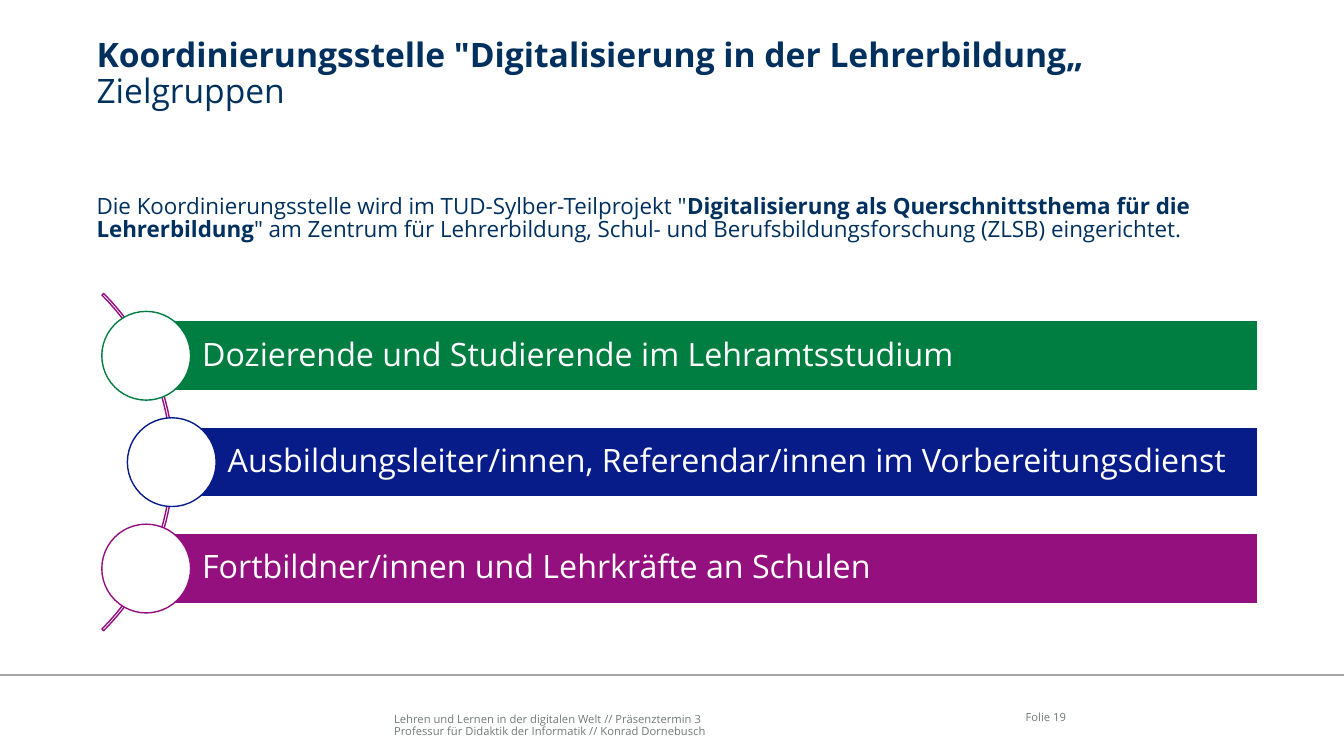
import pptx
import pptx.util
import pptx.dml.color
import pptx.enum.shapes
import pptx.enum.text
import pptx.oxml.ns
import lxml.etree

Pt = pptx.util.Pt
SHAPES = pptx.enum.shapes.MSO_SHAPE
ANCHOR = pptx.enum.text.MSO_ANCHOR
ALIGN = pptx.enum.text.PP_ALIGN

TITLE = [[('Koordinierungsstelle "Digitalisierung in der Lehrerbildung„', True),
          ("\n", False), ("Zielgruppen", False)]]
INTRO = [[('Die Koordinierungsstelle wird im TUD-Sylber-Teilprojekt "', False),
          ("Digitalisierung als Querschnittsthema für die Lehrerbildung", True),
          ('" am Zentrum für Lehrerbildung, Schul- und Berufsbildungsforschung (ZLSB) eingerichtet.', False)]]
AUDIENCES = [
    ("Dozierende und Studierende im Lehramtsstudium", "007D40", 72.7),
    ("Ausbildungsleiter/innen, Referendar/innen im Vorbereitungsdienst", "071C89", 91),
    ("Fortbildner/innen und Lehrkräfte an Schulen", "93107E", 72.7),
]
FOOTER = [[("Lehren und Lernen in der digitalen Welt // Präsenztermin 3", False)],
          [("Professur für Didaktik der Informatik // Konrad Dornebusch", False)]]
PAGE = [[("Folie 19", False)]]

THEME = {
    "font": "Open Sans",
    "navy": "00305E", "white": "FFFFFF", "grey": "727879", "rule": "A6A6A6", "arc": "93107E",
    "title": 24, "intro": 16, "bar": 23, "footer": 8,
}

deck = pptx.Presentation()
deck.slide_width, deck.slide_height = Pt(960), Pt(540)
slide = deck.slides.add_slide(deck.slide_layouts[6])


def rgb(value):
    return pptx.dml.color.RGBColor.from_string(value)


def write(target, paragraphs, size, color, spacing=1, align=ALIGN.LEFT,
          anchor=ANCHOR.TOP, insets=(0, 0, 0, 0)):
    frame = target.text_frame
    frame.word_wrap = True
    frame.vertical_anchor = anchor
    frame.margin_left, frame.margin_top, frame.margin_right, frame.margin_bottom = map(Pt, insets)
    for index, pieces in enumerate(paragraphs):
        paragraph = frame.paragraphs[0] if index == 0 else frame.add_paragraph()
        paragraph.alignment = align
        paragraph.line_spacing = spacing
        for words, bold in pieces:
            if words == "\n":
                paragraph.add_line_break()
                continue
            run = paragraph.add_run()
            run.text = words
            run.font.name = THEME["font"]
            run.font.size = Pt(size)
            run.font.bold = bold
            run.font.color.rgb = rgb(color)


def textbox(left, top, width, height, paragraphs, **style):
    write(slide.shapes.add_textbox(*map(Pt, (left, top, width, height))), paragraphs, **style)


def draw(kind, left, top, width, height, line, fill=None):
    shape = slide.shapes.add_shape(kind, *map(Pt, (left, top, width, height)))
    shape.shadow.inherit = False
    if fill:
        shape.fill.solid()
        shape.fill.fore_color.rgb = rgb(fill)
    else:
        shape.fill.background()
    shape.line.color.rgb = rgb(line)
    shape.line.width = Pt(1)
    return shape


textbox(281.5, 507.6, 408, 19.4, FOOTER, size=THEME["footer"], color=THEME["grey"],
        spacing=0.9, anchor=ANCHOR.BOTTOM)
textbox(706, 497, 55.5, 20, PAGE, size=THEME["footer"], color=THEME["grey"],
        align=ALIGN.RIGHT, anchor=ANCHOR.BOTTOM)

rule = slide.shapes.add_connector(pptx.enum.shapes.MSO_CONNECTOR.STRAIGHT,
                                  Pt(0), Pt(482.2), Pt(960), Pt(482.2))
rule.line.color.rgb = rgb(THEME["rule"])
rule.line.width = Pt(1)
lxml.etree.SubElement(rule.line._get_or_add_ln().getparent(), pptx.oxml.ns.qn("a:effectLst"))

MIDDLE, PITCH = 330.1, 76
ARC, BAR, CIRCLE, BAR_RIGHT = 340.6, 50, 63.4, 898.6

arc = draw(SHAPES.BLOCK_ARC, -216.7, MIDDLE - ARC / 2, ARC, ARC, THEME["arc"])
for index, turn in enumerate((189, 27, 0.005)):
    arc.adjustments[index] = turn

for index, (audience, color, circle_left) in enumerate(AUDIENCES):
    center = MIDDLE + (index - 1) * PITCH
    bar_left = circle_left + CIRCLE / 2
    bar = draw(SHAPES.RECTANGLE, bar_left, center - BAR / 2, BAR_RIGHT - bar_left, BAR,
               THEME["white"], color)
    write(bar, [[(audience, False)]], size=THEME["bar"], color=THEME["white"], spacing=0.9,
          anchor=ANCHOR.MIDDLE, insets=(40, 4.5, 4.5, 4.5))
    draw(SHAPES.OVAL, circle_left, center - CIRCLE / 2, CIRCLE, CIRCLE, color, THEME["white"])

textbox(69, 27.4, 833, 54, TITLE, size=THEME["title"], color=THEME["navy"], spacing=0.9)
textbox(69, 139.7, 833, 40, INTRO, size=THEME["intro"], color=THEME["navy"], spacing=0.86)

deck.save("out.pptx")
